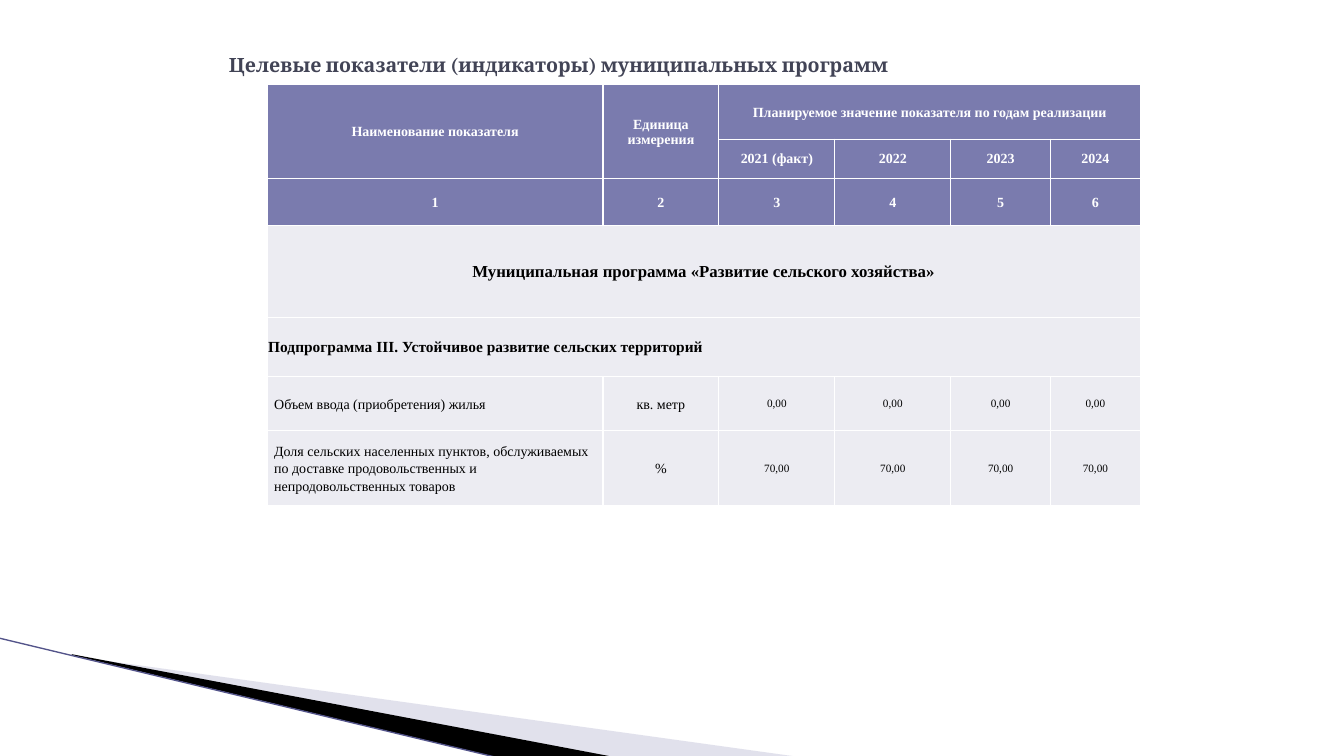
from dataclasses import dataclass

from lxml.etree import SubElement
from pptx import Presentation
from pptx.dml.color import RGBColor
from pptx.enum.shapes import MSO_CONNECTOR
from pptx.enum.text import MSO_ANCHOR, MSO_AUTO_SIZE, PP_ALIGN
from pptx.oxml.ns import qn
from pptx.util import Pt

PX = 9144
WHITE = RGBColor(0xFF, 0xFF, 0xFF)
BLACK = RGBColor(0x00, 0x00, 0x00)
TITLE = RGBColor(0x42, 0x44, 0x56)
HEAD = RGBColor(0x7A, 0x7B, 0xAE)
BODY = RGBColor(0xEC, 0xEC, 0xF2)
LILAC = RGBColor(0xB6, 0xB6, 0xD1)
VIOLET = RGBColor(0x53, 0x54, 0x8A)
COLUMNS = (333, 115, 115, 115, 99, 89)


@dataclass(frozen=True)
class CellStyle:
    size: int
    fill: RGBColor = BODY
    color: RGBColor = BLACK
    bold: bool = False
    align: PP_ALIGN = PP_ALIGN.CENTER
    margins: tuple[int, int, int, int] = (1, 1, 1, 0)
    spacing: float = 1.0


@dataclass(frozen=True)
class Row:
    height: int
    texts: tuple[str, ...]
    styles: tuple[CellStyle, ...]


@dataclass(frozen=True)
class Span:
    top: int
    left: int
    bottom: int
    right: int


@dataclass(frozen=True)
class Wedge:
    points: tuple[tuple[int, int], ...]
    color: RGBColor
    opacity: int


HEADING = (CellStyle(10, HEAD, WHITE, True),) * 6
PROGRAM = (CellStyle(12, bold=True),) * 6
SUBPROGRAM = (CellStyle(11, bold=True, align=PP_ALIGN.LEFT),) * 6
WIDE = (7, 0, 7, 0)
INDICATOR = (
    CellStyle(10, align=PP_ALIGN.LEFT, margins=WIDE, spacing=1.15),
    CellStyle(10, margins=WIDE, spacing=1.15),
) + (CellStyle(8),) * 4

ROWS = (
    Row(54, ("Наименование показателя", "Единица измерения",
             "Планируемое значение показателя по годам реализации"), HEADING),
    Row(39, ("", "", "2021 (факт)", "2022", "2023", "2024"), HEADING),
    Row(47, ("1", "2", "3", "4", "5", "6"), HEADING),
    Row(91, ("Муниципальная программа «Развитие сельского хозяйства»",), PROGRAM),
    Row(59, ("Подпрограмма III. Устойчивое развитие сельских территорий",), SUBPROGRAM),
    Row(53, ("Объем ввода (приобретения) жилья", "кв. метр") + ("0,00",) * 4, INDICATOR),
    Row(75, ("Доля сельских населенных пунктов, обслуживаемых по доставке "
             "продовольственных и непродовольственных товаров", "%") + ("70,00",) * 4,
        INDICATOR),
)
SPANS = (
    Span(0, 0, 1, 0),
    Span(0, 1, 1, 1),
    Span(0, 2, 0, 5),
    Span(3, 0, 3, 5),
    Span(4, 0, 4, 5),
)
WEDGES = (
    Wedge(((73, 651), (793, 751), (608, 751), (73, 650)), LILAC, 40),
    Wedge(((71, 649), (609, 751), (496, 752), (72, 650)), BLACK, 100),
)


def draw_wedge(slide, wedge: Wedge) -> None:
    start, *rest = wedge.points
    builder = slide.shapes.build_freeform(*start, scale=PX)
    builder.add_line_segments(rest, close=True)
    sp = builder.convert_to_shape()
    sp.shadow.inherit = False
    sp.fill.solid()
    sp.fill.fore_color.rgb = wedge.color
    sp.line.fill.background()
    if wedge.opacity < 100:
        color = sp.fill._xPr.find(qn("a:solidFill"))[0]
        SubElement(color, qn("a:alpha"), val=str(wedge.opacity * 1000))


def draw_edge(slide) -> None:
    line = slide.shapes.add_connector(
        MSO_CONNECTOR.STRAIGHT, -1 * PX, 633 * PX, 495 * PX, 752 * PX)
    line.line.color.rgb = VIOLET
    line.line.width = Pt(0.95)
    SubElement(line._element.spPr, qn("a:effectLst"))


def draw_title(slide) -> None:
    sp = slide.shapes.title
    sp.left, sp.top, sp.width, sp.height = (n * PX for n in (217, 30, 900, 69))
    tf = sp.text_frame
    tf.text = "Целевые показатели (индикаторы) муниципальных программ"
    tf.auto_size = MSO_AUTO_SIZE.NONE
    tf.vertical_anchor = MSO_ANCHOR.MIDDLE
    p = tf.paragraphs[0]
    p.alignment = PP_ALIGN.LEFT
    font = p.runs[0].font
    font.name, font.size, font.bold = "Cambria", Pt(14), True
    font.color.rgb = TITLE


def add_borders(cell) -> None:
    props = cell._tc.get_or_add_tcPr()
    for side in ("lnL", "lnR", "lnT", "lnB"):
        border = SubElement(props, qn(f"a:{side}"), w=str(Pt(1)))
        fill = SubElement(border, qn("a:solidFill"))
        SubElement(fill, qn("a:srgbClr"), val=str(WHITE))


def format_cell(cell, text: str, style: CellStyle) -> None:
    add_borders(cell)
    cell.fill.solid()
    cell.fill.fore_color.rgb = style.fill
    cell.vertical_anchor = MSO_ANCHOR.MIDDLE
    (cell.margin_left, cell.margin_top,
     cell.margin_right, cell.margin_bottom) = (n * PX for n in style.margins)
    cell.text_frame.text = text
    p = cell.text_frame.paragraphs[0]
    p.alignment = style.align
    p.line_spacing = style.spacing
    for r in p.runs:
        r.font.name, r.font.size, r.font.bold = "Times New Roman", Pt(style.size), style.bold
        r.font.color.rgb = style.color


def draw_table(slide) -> None:
    height = sum(row.height for row in ROWS)
    table = slide.shapes.add_table(
        len(ROWS), len(COLUMNS), 265 * PX, 84 * PX, sum(COLUMNS) * PX, height * PX).table
    table.first_row = table.horz_banding = False
    for column, width in zip(table.columns, COLUMNS):
        column.width = width * PX
    for i, row in enumerate(ROWS):
        table.rows[i].height = row.height * PX
        for j, style in enumerate(row.styles):
            text = row.texts[j] if j < len(row.texts) else ""
            format_cell(table.cell(i, j), text, style)
    for span in SPANS:
        table.cell(span.top, span.left).merge(table.cell(span.bottom, span.right))


def main() -> None:
    prs = Presentation()
    prs.slide_width, prs.slide_height = 1333 * PX, 750 * PX
    slide = prs.slides.add_slide(prs.slide_layouts[5])
    for wedge in WEDGES:
        draw_wedge(slide, wedge)
    draw_edge(slide)
    draw_title(slide)
    draw_table(slide)
    prs.save("out.pptx")


if __name__ == "__main__":
    main()
